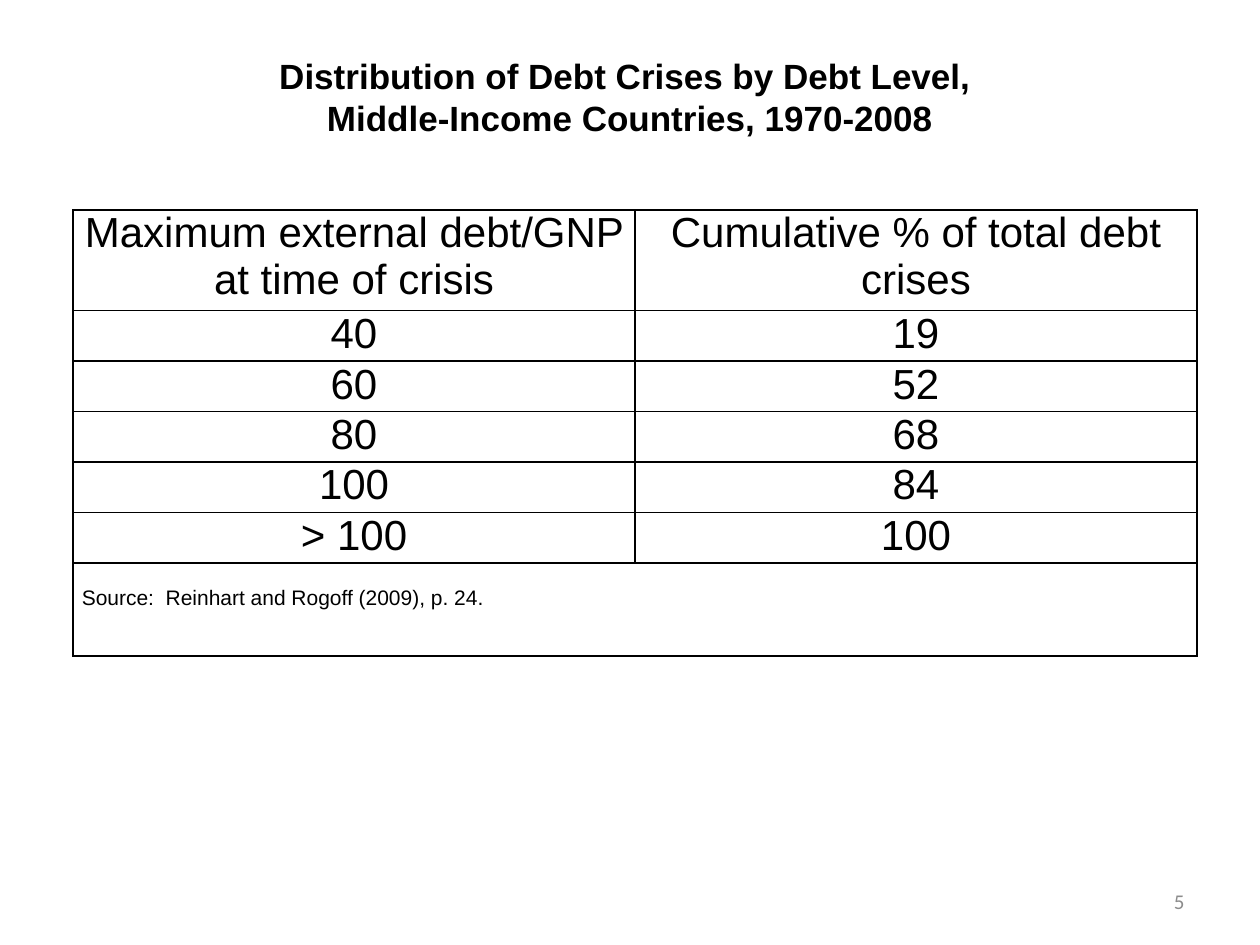
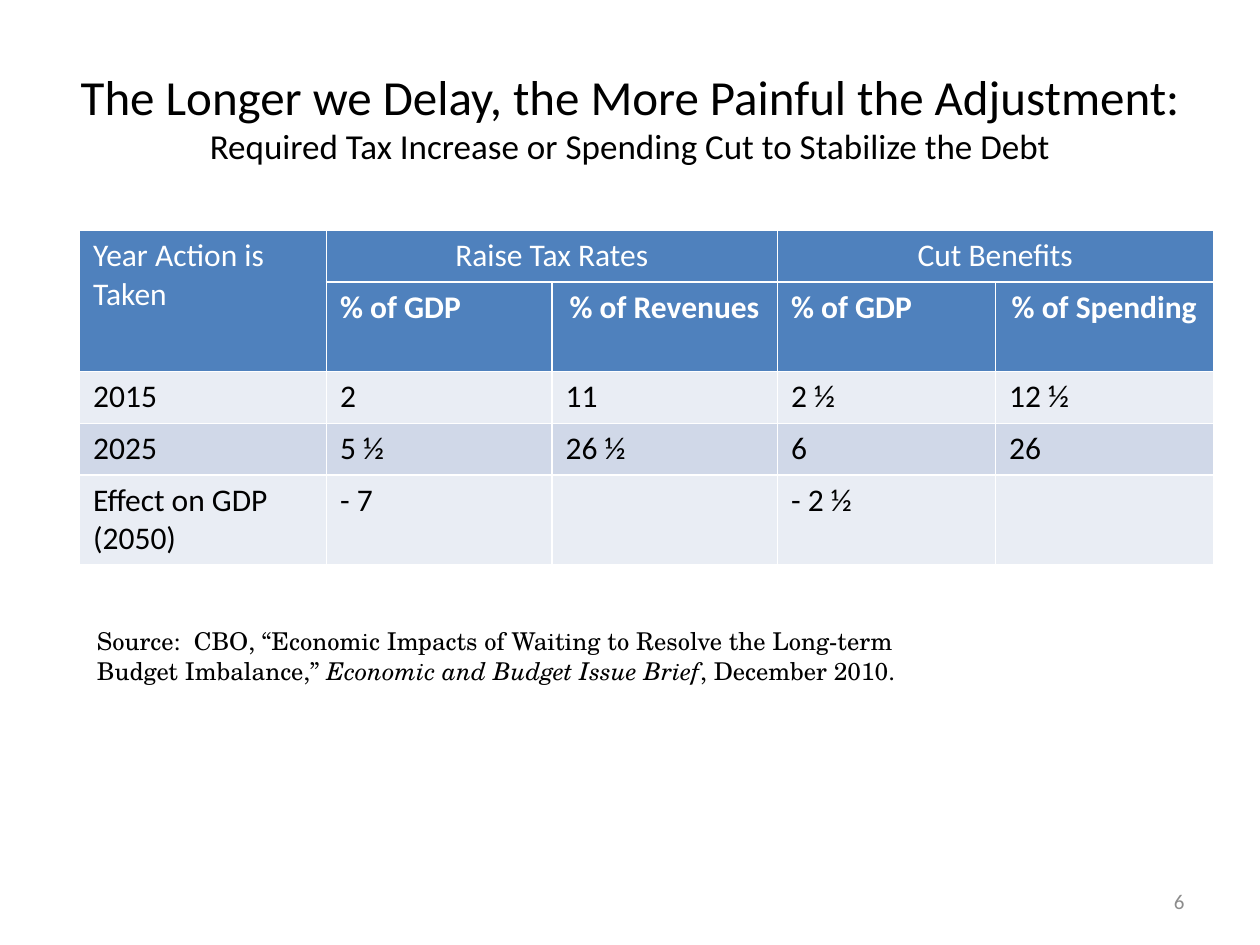
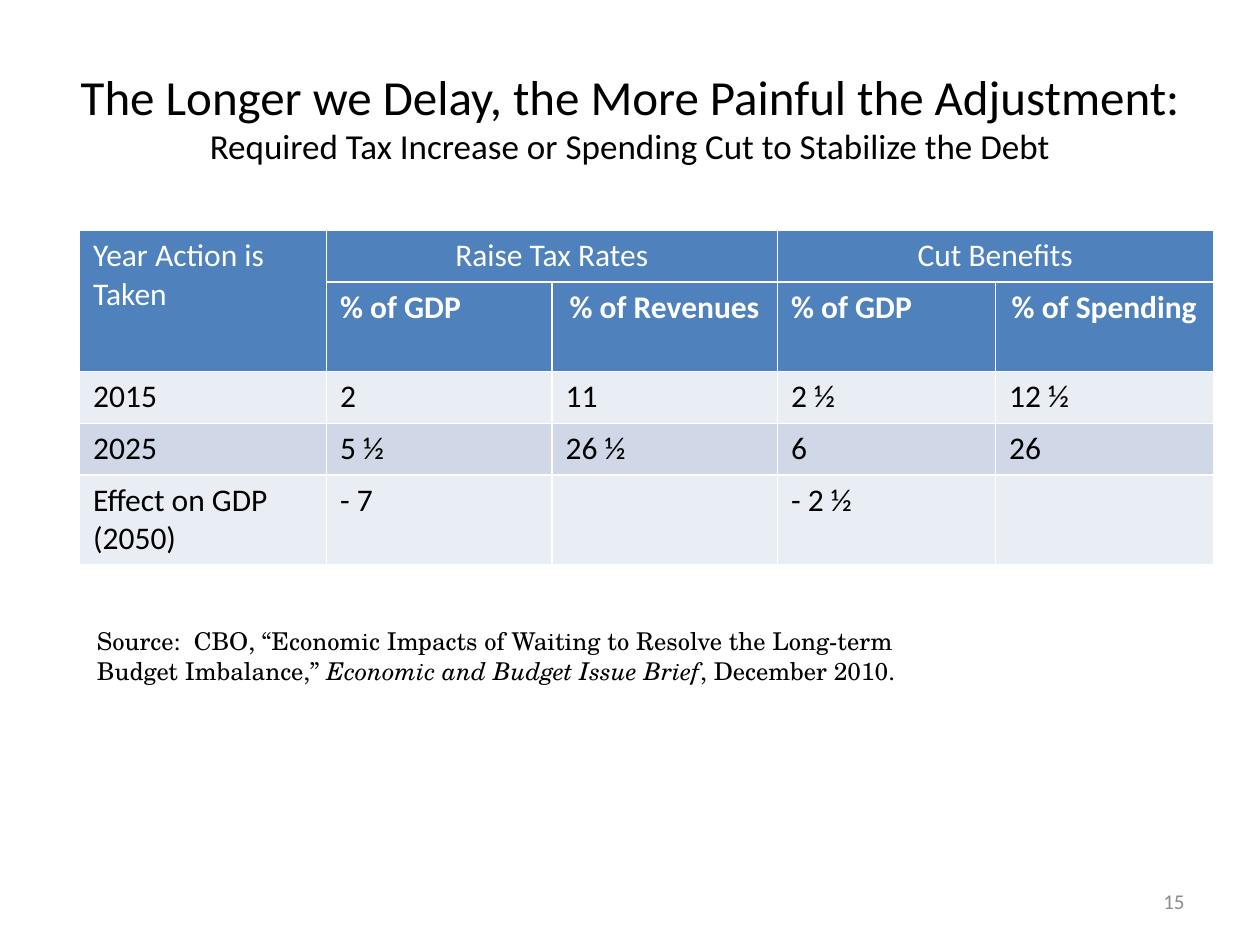
"""Build three slides of tables on debt crises and delayed fiscal adjustment."""
import pptx
import pptx.dml.color
import pptx.enum.text
import pptx.oxml
import pptx.util

LEFT, CENTER, RIGHT = (getattr(pptx.enum.text.PP_ALIGN, side) for side in ("LEFT", "CENTER", "RIGHT"))
MIDDLE = pptx.enum.text.MSO_ANCHOR.MIDDLE
BLACK, WHITE, GREY = "000000", "FFFFFF", "8C8C8C"
HEADER_BLUE, LIGHT_BAND, DARK_BAND = "4F81BD", "E9EDF4", "D0D8E8"
DRAWING = "http://schemas.openxmlformats.org/drawingml/2006/main"


def write(paragraph, text, font, size, color=BLACK, align=LEFT, bold=False):
    """Put text into a paragraph and set its look."""
    paragraph.text = text
    paragraph.alignment = align
    paragraph.font.name = font
    paragraph.font.size = pptx.util.Pt(size)
    paragraph.font.bold = bold
    paragraph.font.color.rgb = pptx.dml.color.RGBColor.from_string(color)


def add_grid(slide, left, top, columns, rows, margins, line):
    """Add a ruled table whose measures are shares of the slide; margins are inches."""
    grid = slide.shapes.add_table(len(rows), len(columns), int(left * width), int(top * height),
                                  int(sum(columns) * width), int(sum(rows) * height)).table
    grid.first_row = grid.horz_banding = False
    for column, share in zip(grid.columns, columns):
        column.width = int(share * width)
    for row, share in zip(grid.rows, rows):
        row.height = int(share * height)
    for cell in grid.iter_cells():
        cell.margin_left = cell.margin_right = pptx.util.Inches(margins[0])
        cell.margin_top = cell.margin_bottom = pptx.util.Inches(margins[1])
        for edge in "LRTB":
            cell._tc.get_or_add_tcPr().append(pptx.oxml.parse_xml(
                f'<a:ln{edge} xmlns:a="{DRAWING}" w="12700"><a:solidFill>'
                f'<a:srgbClr val="{line}"/></a:solidFill></a:ln{edge}>'))
        cell.fill.background()
    return grid


deck = pptx.Presentation()
deck.slide_width, deck.slide_height = pptx.util.Inches(10), pptx.util.Inches(7.5)
width, height = deck.slide_width, deck.slide_height

crisis_title = [("Distribution of Debt Crises by Debt Level, ", 20),
                ("Middle-Income Countries, 1970-2008", 20)]
delay_title = [("The Longer we Delay, the More Painful the Adjustment:", 28),
               ("Required Tax Increase or Spending Cut to Stabilize the Debt", 20)]
headings = [(crisis_title, "Arial", True, 0.37, "5"),
            (delay_title, "Calibri", False, 0.05, "6"),
            (delay_title, "Calibri", False, 0.05, "15")]

for title_lines, title_font, bold, bottom_margin, number in headings:
    slide = deck.slides.add_slide(deck.slide_layouts[6])
    title = slide.shapes.add_textbox(int(0.05 * width), int(0.04 * height),
                                     int(0.9 * width), int(height / 6)).text_frame
    title.word_wrap = True
    title.vertical_anchor = MIDDLE
    title.margin_bottom = pptx.util.Inches(bottom_margin)
    title.add_paragraph()
    for paragraph, (text, size) in zip(title.paragraphs, title_lines):
        write(paragraph, text, title_font, size, align=CENTER, bold=bold)

    page = slide.shapes.add_textbox(int(0.717 * width), int(0.927 * height),
                                    int(0.233 * width), int(0.053 * height)).text_frame
    page.word_wrap = True
    page.vertical_anchor = MIDDLE
    write(page.paragraphs[0], number, "Calibri", 12, GREY, RIGHT)

crisis_slide, *delay_slides = deck.slides

crisis_rows = [("Maximum external debt/GNP at time of crisis", "Cumulative % of total debt crises"),
               ("40", "19"), ("60", "52"), ("80", "68"), ("100", "84"), ("> 100", "100")]
line_share = 0.37 / 7.5
crises = add_grid(crisis_slide, 0.058, 0.222, [0.446] * 2,
                  [2 * line_share] + [line_share] * 5 + [2 * line_share], (0.07, 0), BLACK)
for row, values in enumerate(crisis_rows):
    for column, value in enumerate(values):
        write(crises.cell(row, column).text_frame.paragraphs[0], value, "Arial", 24, align=CENTER)
source = crises.cell(6, 0)
source.merge(crises.cell(6, 1))
source.margin_top = pptx.util.Inches(0.19)
write(source.text_frame.paragraphs[0], "Source:  Reinhart and Rogoff (2009), p. 24.", "Arial", 12)

adjustment_rows = [("Year Action is Taken", "Raise Tax Rates", "", "Cut Benefits", ""),
                   ("", "% of GDP", "% of Revenues", "% of GDP", "% of Spending"),
                   ("2015", "2", "11", "2 ½", "12 ½"),
                   ("2025", "5 ½", "26 ½", "6", "26"),
                   ("Effect on GDP (2050)", "- 7", "", "- 2 ½", "")]
row_fills = [HEADER_BLUE, HEADER_BLUE, LIGHT_BAND, DARK_BAND, LIGHT_BAND]
centred = {(0, 1), (0, 3), (1, 2), (1, 4)}
short, tall = 0.41 / 7.5, 0.71 / 7.5

for slide in delay_slides:
    adjustment = add_grid(slide, 0.063, 0.244, [0.196, 0.179, 0.179, 0.173, 0.173],
                          [short, tall, short, short, tall], (0.11, 0.05), WHITE)
    for row, values in enumerate(adjustment_rows):
        for column, value in enumerate(values):
            cell = adjustment.cell(row, column)
            cell.fill.solid()
            cell.fill.fore_color.rgb = pptx.dml.color.RGBColor.from_string(row_fills[row])
            if value:
                write(cell.text_frame.paragraphs[0], value, "Calibri", 18,
                      WHITE if row < 2 else BLACK,
                      CENTER if (row, column) in centred else LEFT, row == 1)
    for first, last in [((0, 0), (1, 0)), ((0, 1), (0, 2)), ((0, 3), (0, 4))]:
        adjustment.cell(*first).merge(adjustment.cell(*last))

    citation = slide.shapes.add_textbox(int(0.067 * width), int(0.656 * height),
                                        int(0.708 * width), int(0.076 * height)).text_frame
    citation.word_wrap = True
    reference = citation.paragraphs[0]
    write(reference, "Source:  CBO, “Economic Impacts of Waiting to Resolve the Long-term "
          "Budget Imbalance,” ", "TeX Gyre Schola", 14)
    journal = reference.add_run()
    journal.text = "Economic and Budget Issue Brief"
    journal.font.italic = True
    reference.add_run().text = ", December 2010."

deck.save("out.pptx")
